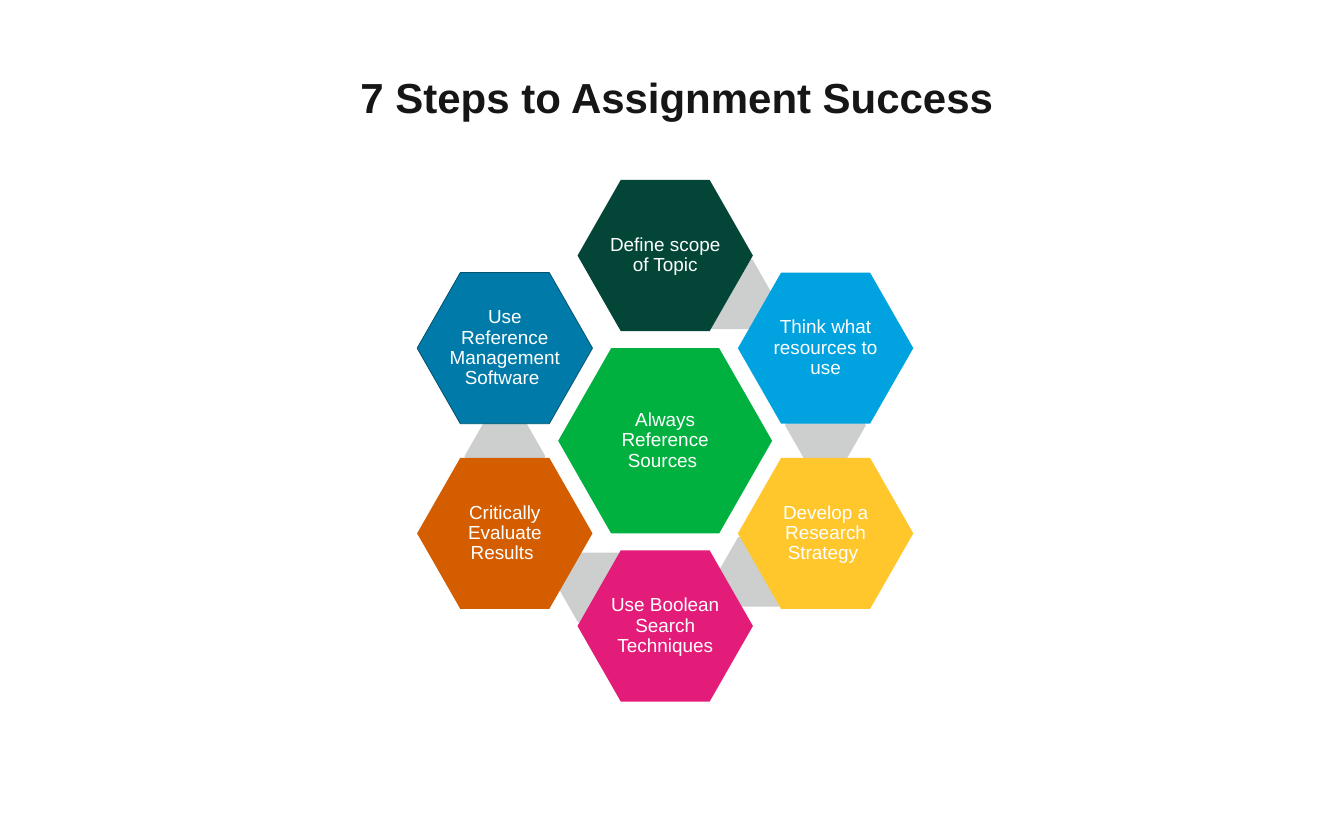
"""Build the slide of seven steps as a ring of hexagons around a centre."""
from math import cos, radians, sin

from pptx import Presentation
from pptx.dml.color import RGBColor
from pptx.enum.shapes import MSO_SHAPE as Preset
from pptx.enum.text import MSO_ANCHOR as Anchor, MSO_AUTO_SIZE as AutoSize, PP_ALIGN as Align
from pptx.util import Inches, Pt

TITLE = "7 Steps to Assignment Success"
CORE = ("Always Reference Sources ", "00B140", None)
STEPS = [
    ("Define scope of Topic", "034638", None),
    ("Think what resources to use", "00A3E0", None),
    ("Develop a Research Strategy ", "FFC72C", None),
    ("Use Boolean Search Techniques", "E31C79", None),
    ("Critically Evaluate Results ", "D45D00", None),
    ("Use Reference Management Software ", "007AA8", "005170"),
]
FONT, INK, WHITE, LINK_GREY = "Arial", "171616", "FFFFFF", "CCCFCE"

SLIDE_SIZE = (17.78, 11.11)
TITLE_BOX = (4.67, 0.9, 8.81, 0.77)
CENTRE = (8.8, 5.83)
CORE_SIZE, STEP_SIZE, LINK_SIZE = (2.83, 2.45), (2.32, 2), (1.07, 0.92)
STEP_RADIUS, LINK_RADIUS = 2.45, 2.13
TURN = 360 / len(STEPS)
LINK_START = 24.5
INSET = 0.03


def color(value):
    return RGBColor.from_string(value)


def set_font(paragraph, size, ink, bold=False):
    font = paragraph.font
    font.name, font.size, font.bold = FONT, Pt(size), bold
    font.color.rgb = color(ink)


def on_ring(radius, angle):
    x, y = CENTRE
    return x + radius * sin(radians(angle)), y - radius * cos(radians(angle))


def add_hexagon(slide, middle, size, fill, outline=None):
    corner = [m - s / 2 for m, s in zip(middle, size)]
    hexagon = slide.shapes.add_shape(Preset.HEXAGON, *map(Inches, (*corner, *size)))
    hexagon.adjustments[0] = 0.286
    hexagon.shadow.inherit = False
    hexagon.fill.solid()
    hexagon.fill.fore_color.rgb = color(fill)
    if outline:
        hexagon.line.color.rgb = color(outline)
        hexagon.line.width = Pt(0.75)
    else:
        hexagon.line.fill.background()
    return hexagon


def add_step(slide, middle, size, step):
    label, fill, outline = step
    frame = add_hexagon(slide, middle, size, fill, outline).text_frame
    frame.word_wrap = True
    frame.vertical_anchor = Anchor.MIDDLE
    frame.margin_left = frame.margin_right = Inches(INSET)
    frame.margin_top = frame.margin_bottom = Inches(INSET)
    paragraph = frame.paragraphs[0]
    paragraph.text = label
    paragraph.alignment = Align.CENTER
    paragraph.line_spacing = 0.9
    set_font(paragraph, 18, WHITE)


def add_title(slide):
    frame = slide.shapes.add_textbox(*map(Inches, TITLE_BOX)).text_frame
    frame.word_wrap = False
    frame.auto_size = AutoSize.SHAPE_TO_FIT_TEXT
    frame.text = TITLE
    set_font(frame.paragraphs[0], 40, INK, bold=True)


def main():
    deck = Presentation()
    deck.slide_width, deck.slide_height = map(Inches, SLIDE_SIZE)
    slide = deck.slides.add_slide(deck.slide_layouts[6])
    add_step(slide, CENTRE, CORE_SIZE, CORE)
    for index in range(len(STEPS) - 1):
        add_hexagon(slide, on_ring(LINK_RADIUS, LINK_START + index * TURN), LINK_SIZE, LINK_GREY)
    for index, step in enumerate(STEPS):
        add_step(slide, on_ring(STEP_RADIUS, index * TURN), STEP_SIZE, step)
    add_title(slide)
    deck.save("out.pptx")


if __name__ == "__main__":
    main()
